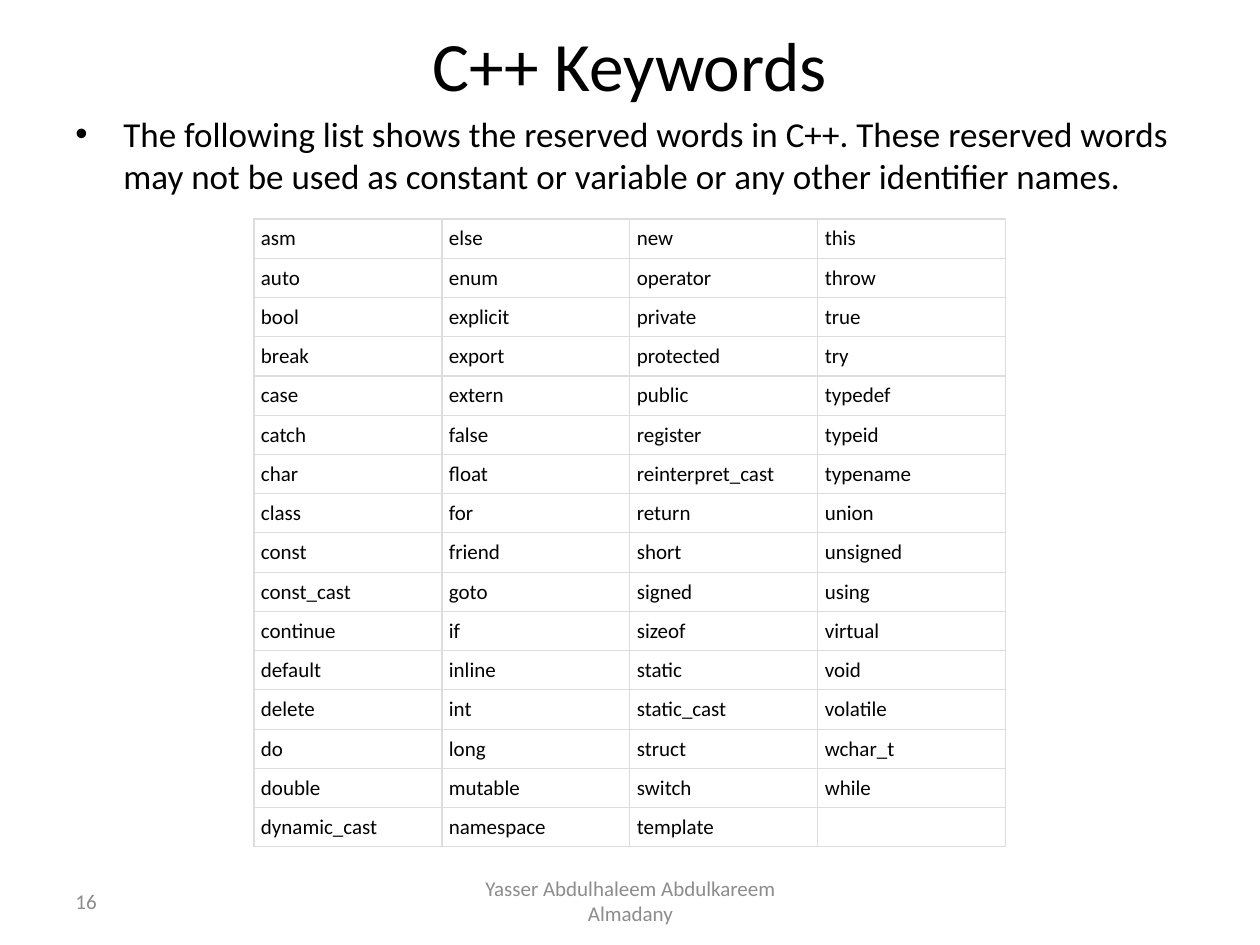
from pptx import Presentation
from pptx.dml.color import RGBColor
from pptx.enum.text import MSO_ANCHOR as Anchor, PP_ALIGN as Align
from pptx.oxml.ns import qn
from pptx.util import Pt
from lxml.etree import SubElement

PX = 914400 // 126
FONT = "Calibri"
COLORS = {"text": "000000", "footer": "8C8C8C", "paper": "FFFFFF", "grid": "DDDDDD"}

INTRO = ("The following list shows the reserved words in C++. These reserved words "
         "may not be used as constant or variable or any other identifier names.")

# One string per table column, read downwards
KEYWORD_COLUMNS = [
    "asm auto bool break case catch char class const const_cast continue "
    "default delete do double dynamic_cast",
    "else enum explicit export extern false float for friend goto if inline "
    "int long mutable namespace",
    "new operator private protected public register reinterpret_cast return "
    "short signed sizeof static static_cast struct switch template",
    "this throw true try typedef typeid typename union unsigned using virtual "
    "void volatile wchar_t while",
]


def px(length):
    return length * PX


def write_text(frame, text, size=12, color="text", align=Align.LEFT, bullet_indent=0):
    paragraph = frame.paragraphs[0]
    paragraph.alignment = align
    if bullet_indent:
        properties = paragraph._p.get_or_add_pPr()
        properties.set("marL", str(px(bullet_indent)))
        properties.set("indent", str(-px(bullet_indent)))
        SubElement(properties, qn("a:buFont"), typeface="Arial")
        SubElement(properties, qn("a:buChar"), char="•")
    if not text:
        # An empty cell keeps the text size, so its row does not grow
        SubElement(paragraph._p, qn("a:endParaRPr"), sz=str(size * 100))
        return
    run = paragraph.add_run()
    run.text = text
    run.font.name = FONT
    run.font.size = Pt(size)
    run.font.color.rgb = RGBColor.from_string(COLORS[color])


def add_text_box(slide, text, left, top, width, height, anchor=Anchor.MIDDLE, **style):
    frame = slide.shapes.add_textbox(px(left), px(top), px(width), px(height)).text_frame
    frame.word_wrap = True
    frame.vertical_anchor = anchor
    write_text(frame, text, **style)


def set_borders(cell, color, width):
    properties = cell._tc.get_or_add_tcPr()
    for position, side in enumerate(("lnL", "lnR", "lnT", "lnB")):
        line = SubElement(properties, qn(f"a:{side}"), w=str(Pt(width)))
        fill = SubElement(line, qn("a:solidFill"))
        SubElement(fill, qn("a:srgbClr"), val=COLORS[color])
        properties.insert(position, line)  # borders come before the fill


def add_keyword_table(slide, left, top, column_width, row_height, inset):
    columns = [words.split() for words in KEYWORD_COLUMNS]
    row_count = max(map(len, columns))
    table = slide.shapes.add_table(
        row_count, len(columns), px(left), px(top),
        px(column_width * len(columns)), px(row_height * row_count)).table
    table.first_row = table.horz_banding = False
    for column, words in enumerate(columns):
        for row in range(row_count):
            cell = table.cell(row, column)
            cell.margin_left = cell.margin_right = px(inset)
            cell.margin_top = cell.margin_bottom = px(inset)
            cell.fill.solid()
            cell.fill.fore_color.rgb = RGBColor.from_string(COLORS["paper"])
            set_borders(cell, "grid", 0.75)
            write_text(cell.text_frame, words[row] if row < len(words) else "")


def main():
    presentation = Presentation()
    presentation.slide_width, presentation.slide_height = px(1260), px(945)
    slide = presentation.slides.add_slide(presentation.slide_layouts[6])

    # Title
    add_text_box(slide, "C++ Keywords", 63, 0, 1134, 127, size=39.6, align=Align.CENTER)

    # Footer and slide number
    add_text_box(slide, "Yasser Abdulhaleem Abdulkareem Almadany", 431, 876, 399, 50,
                 color="footer", align=Align.CENTER)
    add_text_box(slide, "16", 63, 876, 294, 50, color="footer")

    # Introduction and keyword list
    add_text_box(slide, INTRO, 63, 106, 1134, 738, anchor=Anchor.TOP,
                 size=20, bullet_indent=48)
    add_keyword_table(slide, left=254, top=219, column_width=188, row_height=39, inset=7)

    presentation.save("out.pptx")


if __name__ == "__main__":
    main()
